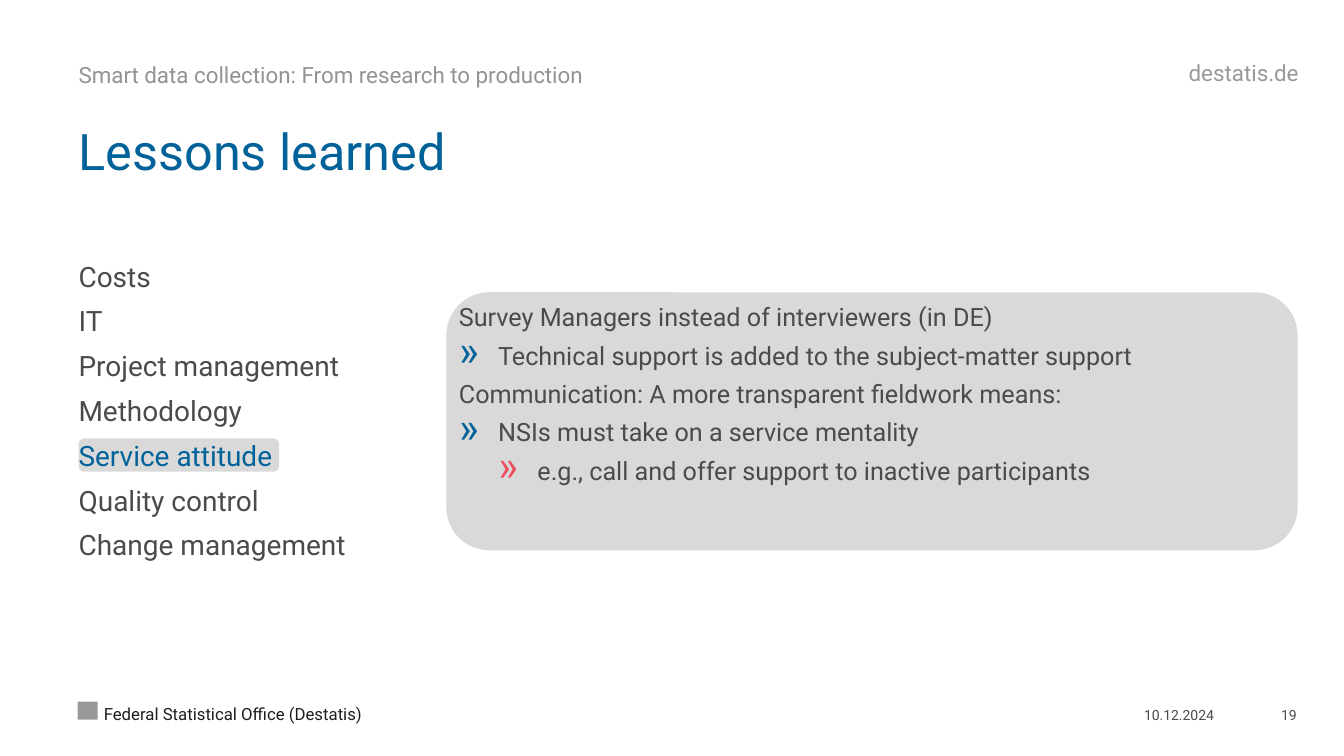
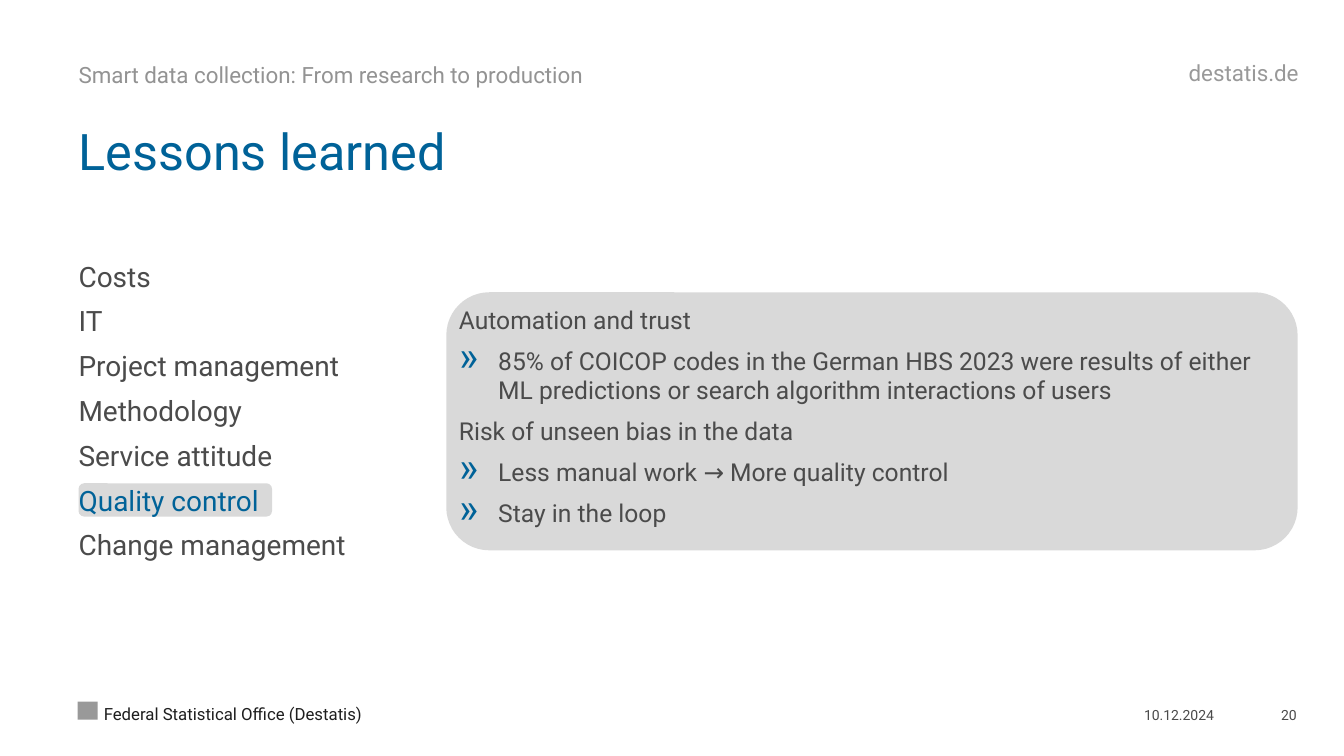
from lxml import etree
from pptx import Presentation
from pptx.dml.color import RGBColor
from pptx.enum.shapes import MSO_SHAPE
from pptx.enum.text import MSO_ANCHOR, PP_ALIGN
from pptx.oxml.ns import qn
from pptx.util import Inches, Pt

ROUNDED = MSO_SHAPE.ROUNDED_RECTANGLE
RECTANGLE = MSO_SHAPE.RECTANGLE
TOP, MIDDLE, BOTTOM = MSO_ANCHOR.TOP, MSO_ANCHOR.MIDDLE, MSO_ANCHOR.BOTTOM
LEFT, RIGHT = PP_ALIGN.LEFT, PP_ALIGN.RIGHT

FONT = "Roboto"
BLUE, RED = "006298", "EC4E60"
TEXT, BLACK = "4B4B4B", "1E1E1E"
PANEL, HEADER, GRAY = "D9D9D9", "939393", "999999"

MARGIN = 0.78
LIST_TOP, ROW_STEP = 2.57, 0.445
INDENT = 0.39
BULLET_COLORS = {1: BLUE, 2: RED}

# text, left, top, width, height, size, colour, anchor, alignment
SHARED_TEXTS = [
    ("destatis.de", 11.19, 0.61, 1.7, 0.23, 16, GRAY, MIDDLE, RIGHT),
    ("Smart data collection: From research to production",
     MARGIN, 0.6, 9.81, 0.27, 16, HEADER, MIDDLE, LEFT),
    ("10.12.2024", 10.41, 6.89, 1.64, 0.29, 10, TEXT, BOTTOM, RIGHT),
    ("Federal Statistical Office (Destatis)",
     1.03, 6.89, 9.29, 0.29, 12, BLACK, BOTTOM, LEFT),
]
TOPICS = ["Costs", "IT", "Project management", "Methodology",
          "Service attitude", "Quality control", "Change management"]

# Panel lines are (level, text); level 0 has no bullet.
SLIDES = [
    {
        "topic": "Service attitude", "highlight_width": 1.99,
        "size": 18, "line_spacing": 0.9,
        "lines": [
            (0, "Survey Managers instead of interviewers (in DE)"),
            (1, "Technical support is added to the subject-matter support"),
            (0, "Communication: A more transparent fieldwork means:"),
            (1, "NSIs must take on a service mentality"),
            (2, "e.g., call and offer support to inactive participants"),
        ],
    },
    {
        "topic": "Quality control", "highlight_width": 1.92,
        "size": 17.6, "line_spacing": 1.0,
        "lines": [
            (0, "Automation and trust"),
            (1, "85% of COICOP codes in the German HBS 2023 were results of "
                "either ML predictions or search algorithm interactions of users"),
            (0, "Risk of unseen bias in the data"),
            (1, "Less manual work → More quality control"),
            (1, "Stay in the loop"),
        ],
    },
]


def add_block(slide, geometry, left, top, width, height, color):
    """Add a filled shape without outline or shadow."""
    shape = slide.shapes.add_shape(
        geometry, Inches(left), Inches(top), Inches(width), Inches(height))
    shape.shadow.inherit = False
    shape.fill.solid()
    shape.fill.fore_color.rgb = RGBColor.from_string(color)
    shape.line.fill.background()
    return shape


def write_lines(shape, lines, size, anchor=TOP, align=LEFT, spacing=1.0, padding=0):
    """Write (level, text, colour) lines; levels above 0 get a bullet."""
    frame = shape.text_frame
    frame_format = {
        "word_wrap": True, "vertical_anchor": anchor,
        "margin_left": 0, "margin_right": 0,
        "margin_top": Inches(padding), "margin_bottom": Inches(padding),
    }
    for name, value in frame_format.items():
        setattr(frame, name, value)
    for index, (level, text, color) in enumerate(lines):
        paragraph = frame.add_paragraph() if index else frame.paragraphs[0]
        if level:
            properties = paragraph._p.get_or_add_pPr()
            properties.set("marL", str(Inches(INDENT * level)))
            properties.set("indent", str(-Inches(INDENT)))
            bullet_color = etree.SubElement(properties, qn("a:buClr"))
            etree.SubElement(bullet_color, qn("a:srgbClr"), val=BULLET_COLORS[level])
            etree.SubElement(properties, qn("a:buSzPct"), val="150000")
            etree.SubElement(properties, qn("a:buChar"), char="»")
        paragraph.level = level
        paragraph.alignment = align
        paragraph.line_spacing = spacing
        paragraph.space_before = Pt(8 if index else 0)
        run = paragraph.add_run()
        run.text = text
        run.font.name = FONT
        run.font.size = Pt(size)
        run.font.color.rgb = RGBColor.from_string(color)


presentation = Presentation()
presentation.slide_width = Inches(13.34)
presentation.slide_height = Inches(7.5)

for number, content in enumerate(SLIDES, start=19):
    slide = presentation.slides.add_slide(presentation.slide_layouts[6])

    # Header and footer
    add_block(slide, RECTANGLE, 0.77, 6.96, 0.2, 0.18, GRAY)
    page_number = (str(number), 12.12, 6.89, 0.75, 0.29, 10, TEXT, BOTTOM, RIGHT)
    for text, left, top, width, height, size, color, anchor, align in [
            *SHARED_TEXTS, page_number]:
        box = slide.shapes.add_textbox(
            Inches(left), Inches(top), Inches(width), Inches(height))
        write_lines(box, [(0, text, color)], size, anchor, align)

    title = slide.shapes.add_textbox(
        Inches(MARGIN), Inches(1.22), Inches(12.11), Inches(0.66))
    write_lines(title, [(0, "Lessons learned", BLUE)], 36, MIDDLE,
                spacing=0.8, padding=0.08)

    # Topic list with the current topic highlighted
    current = TOPICS.index(content["topic"])
    add_block(slide, ROUNDED, MARGIN, LIST_TOP + current * ROW_STEP,
              content["highlight_width"], 0.33, PANEL)
    topic_list = slide.shapes.add_textbox(
        Inches(MARGIN), Inches(LIST_TOP), Inches(3.5), Inches(3.45))
    write_lines(topic_list, [(0, topic, BLUE if topic == content["topic"] else TEXT)
                             for topic in TOPICS], 20)

    # Details of the current topic
    panel = add_block(slide, ROUNDED, 4.43, 2.9, 8.45, 2.56, PANEL)
    write_lines(panel, [(level, text, TEXT) for level, text in content["lines"]],
                content["size"], spacing=content["line_spacing"])

presentation.save("out.pptx")
